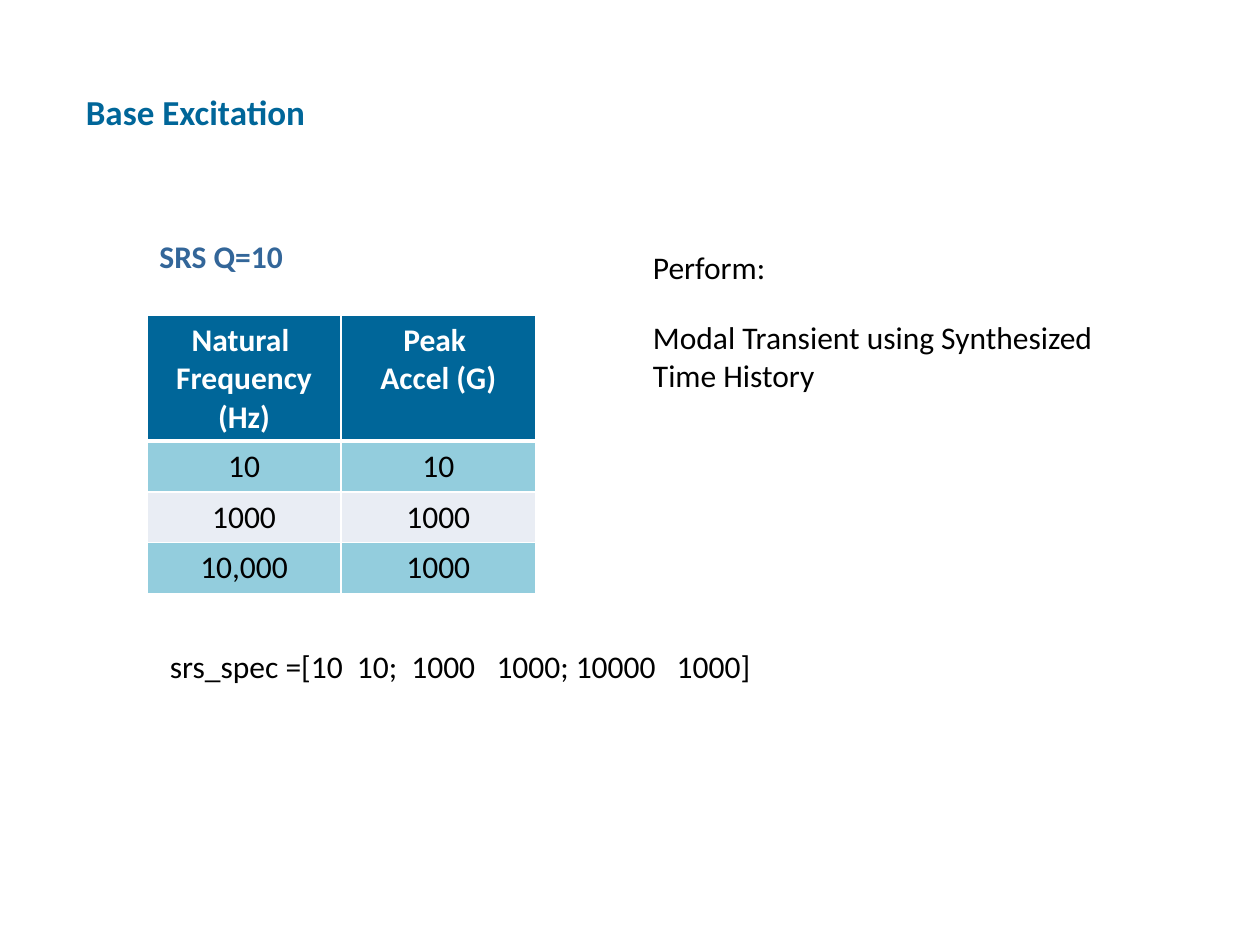
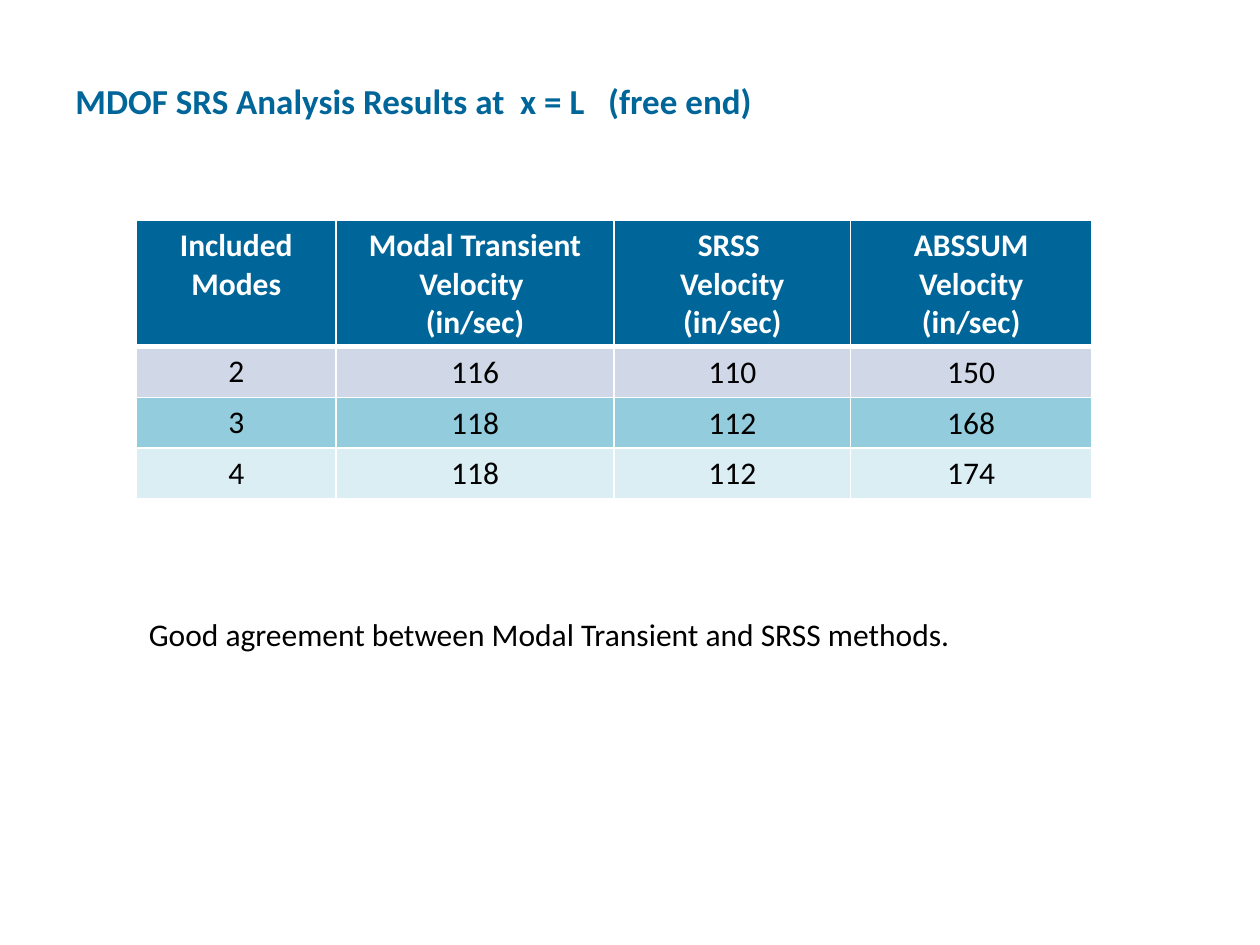
from dataclasses import dataclass

from lxml.etree import SubElement
from pptx import Presentation
from pptx.dml.color import RGBColor
from pptx.enum.text import MSO_ANCHOR as Anchor, PP_ALIGN as Align
from pptx.oxml.ns import qn
from pptx.util import Pt

FONT = "Calibri"
BLUE = "006699"
SLATE = "336699"
AQUA = "93CDDD"
WHITE = "FFFFFF"
BLACK = "000000"

HEAD_HIGH = 71
ROW_HIGH = 29
THIN, THICK = 1, 3


@dataclass
class Box:
    left: float
    top: float
    width: float
    text: str
    size: float = 18
    color: str = BLACK
    bold: bool = False
    gap: float = 0


@dataclass
class Grid:
    left: float
    top: float
    widths: list[float]
    head: list[str]
    rows: list[list[str]]
    fills: list[str]
    tight: bool = False


@dataclass
class Page:
    title: Box
    grid: Grid
    notes: list[Box]


def title(left: float, top: float, width: float, text: str) -> Box:
    return Box(left, top, width, text, size=20, color=BLUE, bold=True)


PAGES = [
    Page(
        title(42, 48, 438, "Base Excitation"),
        Grid(
            84, 180, [111, 111],
            ["Natural \nFrequency (Hz)", "Peak \nAccel (G)"],
            [["10", "10"], ["1000", "1000"], ["10,000", "1000"]],
            [AQUA, "E9EDF4", AQUA],
        ),
        [
            Box(84, 132, 168, "SRS Q=10", color=SLATE, bold=True),
            Box(90, 366, 474, "srs_spec =[10  10;  1000   1000; 10000   1000]"),
            Box(366, 138, 270,
                "Perform:\nModal Transient using Synthesized Time History",
                gap=18.5),
        ],
    ),
    Page(
        title(36, 42, 528, "MDOF SRS Analysis Results at  x = L   (free end)"),
        Grid(
            78, 126, [114, 159, 135, 138],
            ["Included\nModes", "Modal Transient Velocity \n(in/sec)",
             "SRSS \nVelocity\n(in/sec)", "ABSSUM\nVelocity\n(in/sec)"],
            [["2", "116", "110", "150"],
             ["3", "118", "112", "168"],
             ["4", "118", "112", "174"]],
            ["D0D8E8", AQUA, "DBEEF4"],
            tight=True,
        ),
        [Box(78, 348, 570,
             "Good agreement between Modal Transient and SRSS methods.")],
    ),
]


def paint(part, color: str) -> None:
    """Give a fill a solid colour."""
    part.solid()
    part.fore_color.rgb = RGBColor.from_string(color)


def write(frame, text: str, *, size: float = 18, color: str = BLACK,
          bold: bool = False, align=Align.LEFT, gap: float = 0) -> None:
    """Write one paragraph per line, with gap points between them."""
    for i, line in enumerate(text.split("\n")):
        para = frame.add_paragraph() if i else frame.paragraphs[0]
        para.alignment = align
        para.space_before = Pt(gap if i else 0)
        run = para.add_run()
        run.text = line
        font = run.font
        font.name, font.size, font.bold = FONT, Pt(size), bold
        paint(font.fill, color)


def add_box(slide, box: Box) -> None:
    lines = box.text.count("\n") + 1
    high = box.size * 1.22 * lines + 7.2
    shape = slide.shapes.add_textbox(
        Pt(box.left), Pt(box.top), Pt(box.width), Pt(high))
    frame = shape.text_frame
    frame.word_wrap = True
    write(frame, box.text, size=box.size, color=box.color,
          bold=box.bold, gap=box.gap)


def edge(cell, top: float, base: float) -> None:
    """Draw white borders; must run before the cell is filled."""
    props = cell._tc.get_or_add_tcPr()
    for side, width in zip("LRTB", (THIN, THIN, top, base)):
        line = SubElement(props, qn(f"a:ln{side}"), w=str(Pt(width)))
        fill = SubElement(line, qn("a:solidFill"))
        SubElement(fill, qn("a:srgbClr"), val=WHITE)


def add_grid(slide, grid: Grid) -> None:
    rows = [grid.head, *grid.rows]
    highs = [HEAD_HIGH] + [ROW_HIGH] * len(grid.rows)
    table = slide.shapes.add_table(
        len(rows), len(grid.widths), Pt(grid.left), Pt(grid.top),
        Pt(sum(grid.widths)), Pt(sum(highs))).table
    for col, width in zip(table.columns, grid.widths):
        col.width = Pt(width)
    for r, (texts, high, fill) in enumerate(
            zip(rows, highs, [BLUE, *grid.fills])):
        table.rows[r].height = Pt(high)
        head = r == 0
        for c, text in enumerate(texts):
            cell = table.cell(r, c)
            edge(cell, THICK if r == 1 else THIN, THICK if head else THIN)
            paint(cell.fill, fill)
            if grid.tight and c and not head:
                cell.vertical_anchor = Anchor.MIDDLE
                cell.margin_left = cell.margin_right = Pt(0.75)
                cell.margin_top, cell.margin_bottom = Pt(0.75), Pt(0)
            write(cell.text_frame, text, color=WHITE if head else BLACK,
                  bold=head, align=Align.CENTER)


def main() -> None:
    deck = Presentation()
    deck.slide_width, deck.slide_height = Pt(720), Pt(540)
    for page in PAGES:
        slide = deck.slides.add_slide(deck.slide_layouts[6])
        paint(slide.background.fill, WHITE)
        add_box(slide, page.title)
        add_grid(slide, page.grid)
        for note in page.notes:
            add_box(slide, note)
    deck.save("out.pptx")


if __name__ == "__main__":
    main()
